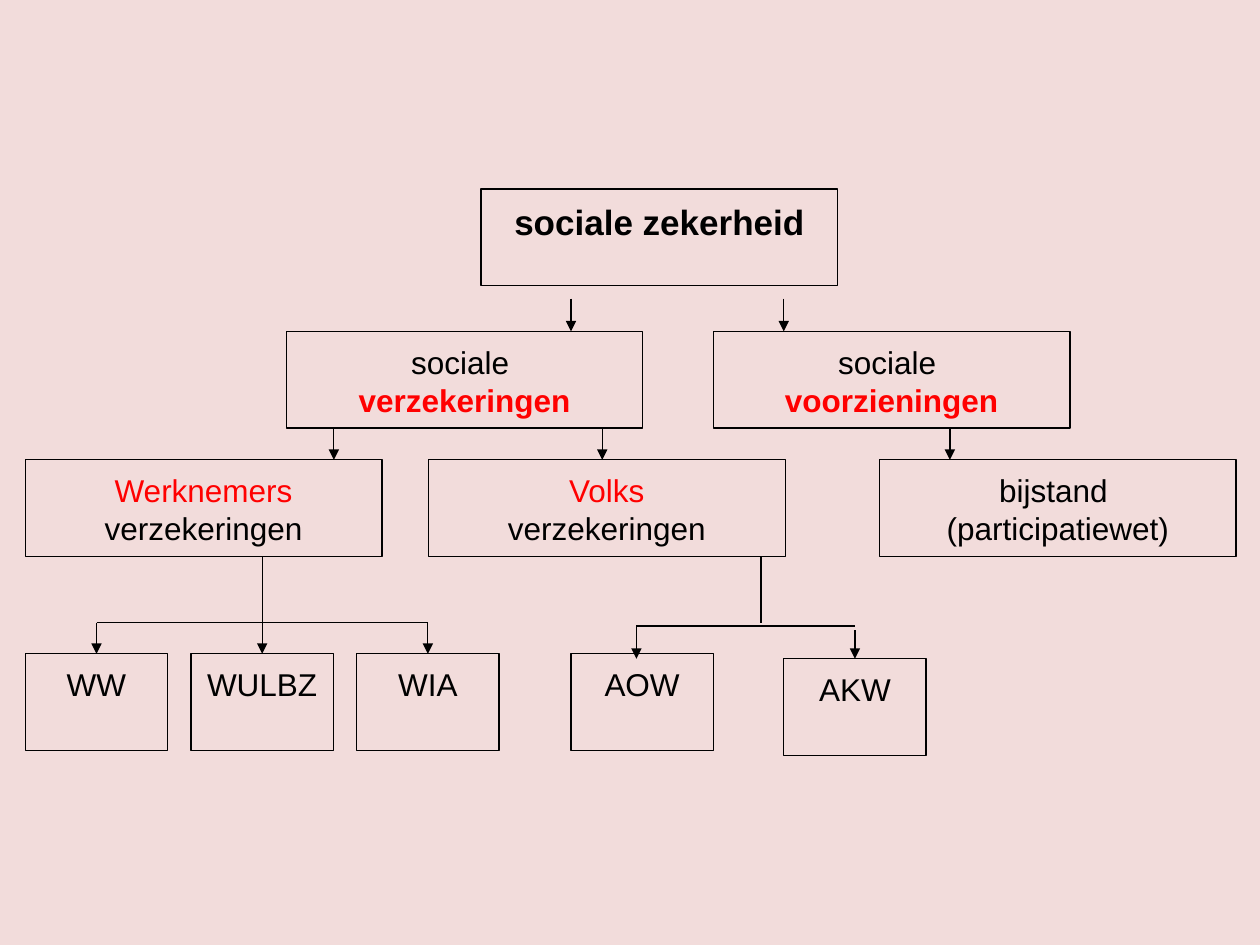
import lxml.etree
import pptx
import pptx.util
import pptx.dml.color
import pptx.enum.shapes
import pptx.enum.text
import pptx.oxml.ns

Cm = pptx.util.Cm
Pt = pptx.util.Pt
qn = pptx.oxml.ns.qn
COLORS = {"background": "F2DCDB", "ink": "000000", "accent": "FF0000"}


def rgb(name):
    return pptx.dml.color.RGBColor.from_string(COLORS[name])


def write_line(paragraph, text, size=18, color="ink", bold=False):
    paragraph.alignment = pptx.enum.text.PP_ALIGN.CENTER
    run = paragraph.add_run()
    run.text = text
    run.font.name = "Arial"
    run.font.size = Pt(size)
    run.font.bold = bold
    run.font.color.rgb = rgb(color)


deck = pptx.Presentation()
deck.slide_width = Cm(25.4)
deck.slide_height = Cm(19.05)
slide = deck.slides.add_slide(deck.slide_layouts[6])
slide.background.fill.solid()
slide.background.fill.fore_color.rgb = rgb("background")

wide, narrow, height = 7.19, 2.87, 1.95
group_top, branch_top, law_top = 6.68, 9.27, 13.18
accent = {"color": "accent"}
strong = {"color": "accent", "bold": True}

boxes = [
    (9.7, 3.81, wide, [("sociale zekerheid", {"size": 20, "bold": True})]),
    (5.77, group_top, wide, [("sociale ", {}), ("verzekeringen", strong)]),
    (14.38, group_top, wide, [("sociale ", {}), ("voorzieningen", strong)]),
    (0.51, branch_top, wide, [("Werknemers", accent), ("verzekeringen", {})]),
    (8.64, branch_top, wide, [("Volks", accent), ("verzekeringen", {})]),
    (17.73, branch_top, wide, [("bijstand ", {}), ("(participatiewet)", {})]),
    (0.51, law_top, narrow, [("WW", {})]),
    (3.85, law_top, narrow, [("WULBZ", {})]),
    (7.19, law_top, narrow, [("WIA", {})]),
    (11.51, law_top, narrow, [("AOW", {})]),
    (15.8, 13.28, narrow, [("AKW", {})]),
]
box_by_label = {}
for left, top, width, lines in boxes:
    box = slide.shapes.add_shape(
        pptx.enum.shapes.MSO_SHAPE.RECTANGLE, Cm(left), Cm(top), Cm(width), Cm(height))
    box.shadow.inherit = False
    box.fill.background()
    box.line.color.rgb = rgb("ink")
    box.line.width = Pt(0.75)
    frame = box.text_frame
    frame.word_wrap = True
    frame.vertical_anchor = pptx.enum.text.MSO_ANCHOR.TOP
    frame.margin_left = frame.margin_right = Cm(0.25)
    frame.margin_top, frame.margin_bottom = Cm(0.23), Cm(0.13)
    for number, (text, style) in enumerate(lines):
        paragraph = frame.add_paragraph() if number else frame.paragraphs[0]
        write_line(paragraph, text, **style)
    box_by_label[lines[0][0]] = box

group_bottom, branch_bottom = group_top + height, branch_top + height
employee_bar, national_bar = 12.55, 12.62
ww, wulbz, wia, akw = 1.95, 5.29, 8.63, 17.24
aow = 12.83

links = [
    (11.51, 6.02, 11.51, group_top, True, None),
    (15.8, 6.02, 15.8, group_top, True, None),
    (6.73, group_bottom, 6.73, branch_top, True, None),
    (12.14, group_bottom, 12.14, branch_top, True, None),
    (19.15, group_bottom, 19.15, branch_top, True, None),
    (ww, employee_bar, ww, law_top, True, "WW"),
    (wulbz, branch_bottom, wulbz, law_top, True, "WULBZ"),
    (wia, employee_bar, wia, law_top, True, "WIA"),
    (ww, employee_bar, wia, employee_bar, False, None),
    (aow, national_bar, aow, 13.28, True, None),
    (15.34, branch_bottom, 15.34, employee_bar, False, None),
    (akw, 12.7, akw, 13.28, True, "AKW"),
    (aow, national_bar, akw, national_bar, False, None),
]
for x1, y1, x2, y2, has_arrow, target in links:
    link = slide.shapes.add_connector(
        pptx.enum.shapes.MSO_CONNECTOR.STRAIGHT, Cm(x1), Cm(y1), Cm(x2), Cm(y2))
    link.line.color.rgb = rgb("ink")
    link.line.width = Pt(0.75)
    if target:
        link.end_connect(box_by_label[target], 0)
        link.begin_x = link.end_x
    properties = link.element.find(qn("p:spPr"))
    if has_arrow:
        outline = properties.find(qn("a:ln"))
        lxml.etree.SubElement(outline, qn("a:tailEnd"), type="triangle")
    lxml.etree.SubElement(properties, qn("a:effectLst"))

deck.save("out.pptx")
